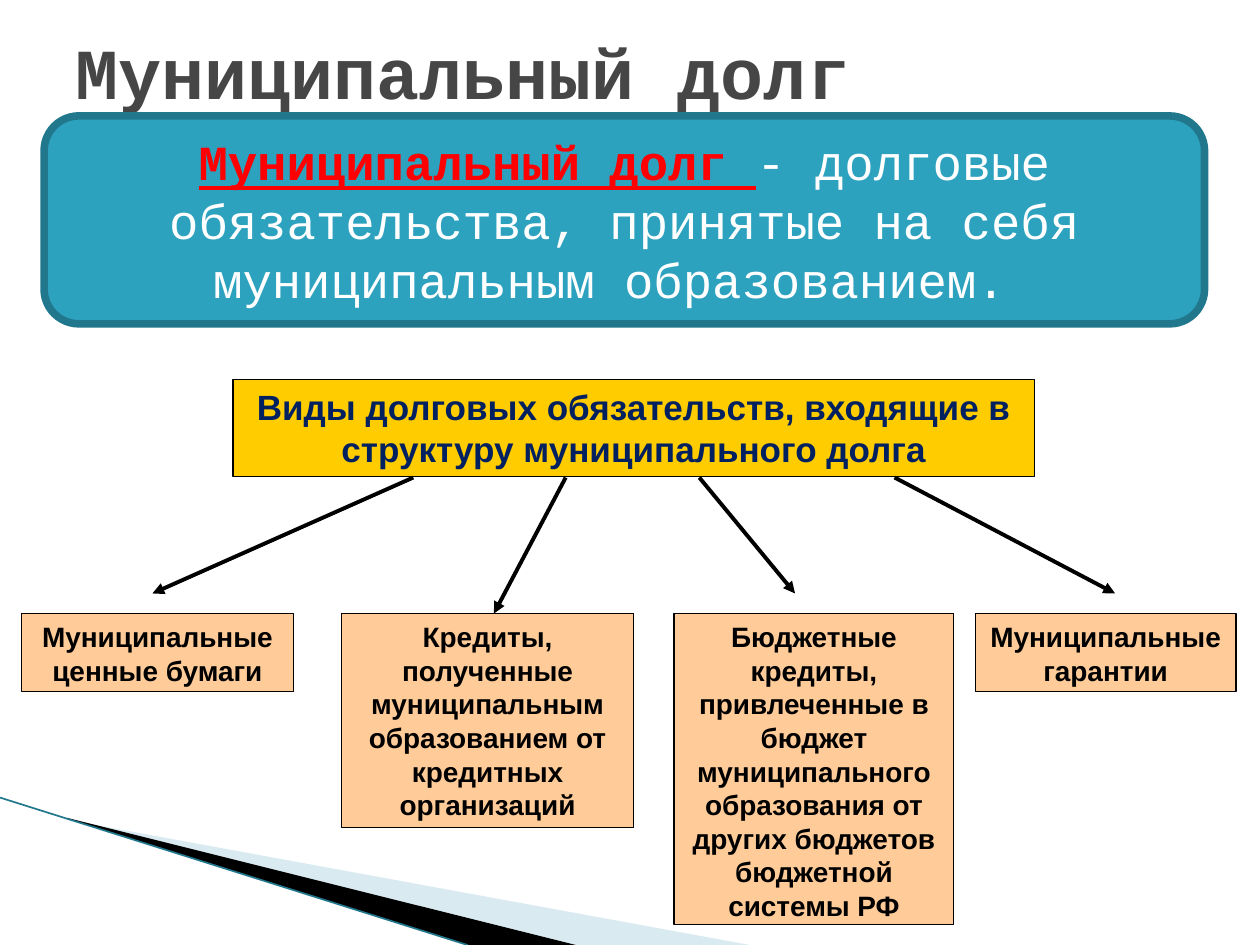
from lxml import etree
from pptx import Presentation
from pptx.dml.color import RGBColor
from pptx.enum.shapes import MSO_CONNECTOR, MSO_SHAPE
from pptx.enum.text import MSO_ANCHOR, PP_ALIGN
from pptx.oxml.ns import qn
from pptx.util import Inches, Pt

RECTANGLE, ROUNDED = MSO_SHAPE.RECTANGLE, MSO_SHAPE.ROUNDED_RECTANGLE
STRAIGHT = MSO_CONNECTOR.STRAIGHT
TOP, MIDDLE = MSO_ANCHOR.TOP, MSO_ANCHOR.MIDDLE
LEFT, CENTER = PP_ALIGN.LEFT, PP_ALIGN.CENTER

TITLE = "Муниципальный долг"
DEFINITION = [
    ("Муниципальный долг ", "FF0000", {"bold": True, "underline": True}),
    ("- долговые обязательства, принятые на себя муниципальным образованием. ", "FFFFFF",
     {"bold": False, "underline": False}),
]
HEADING = "Виды долговых обязательств, входящие в структуру муниципального долга"

# text, left, width, height
DEBT_TYPES = [
    ("Муниципальные ценные бумаги", 0.17, 2.16, 0.62),
    ("Кредиты, полученные муниципальным образованием от кредитных организаций",
     2.71, 2.32, 1.7),
    ("Бюджетные кредиты, привлеченные в бюджет муниципального образования "
     "от других бюджетов бюджетной системы РФ", 5.35, 2.22, 2.47),
    ("Муниципальные гарантии", 7.74, 2.07, 0.62),
]
DEBT_TOP = 4.87

# start x, end x, end y
ARROW_TOP = 3.79
ARROWS = [(3.28, 1.21, 4.71), (4.49, 3.92, DEBT_TOP), (5.55, 6.31, 4.71), (7.1, 8.85, 4.71)]

# points, colour, opacity in percent
CORNER_WEDGES = [
    ([(0.55, 6.51), (5.95, 7.5), (4.56, 7.5), (0.55, 6.5)], "A0CBDC", 40),
    ([(0.53, 6.49), (4.57, 7.5), (3.72, 7.5), (0.54, 6.5)], "000000", 100),
]
CORNER_LINE = [(0, 6.33), (3.71, 7.5)]

TITLE_FONT = {"name": "Courier New", "size": Pt(41), "bold": True}
DEFINITION_FONT = {"name": "Courier New", "size": Pt(28)}
HEADING_FONT = {"name": "Arial", "size": Pt(20), "bold": True}
DEBT_FONT = {"name": "Arial", "size": Pt(16), "bold": True}


def color(value):
    return RGBColor.from_string(value)


def fill_solid(shape, value):
    shape.fill.solid()
    shape.fill.fore_color.rgb = color(value)


def write_text(shape, runs, font_format, align=CENTER, anchor=TOP):
    """Fill a shape with one paragraph of (text, colour, extra format) runs."""
    frame = shape.text_frame
    frame.word_wrap = True
    frame.vertical_anchor = anchor
    paragraph = frame.paragraphs[0]
    paragraph.alignment = align
    for text, text_color, extra in runs:
        run = paragraph.add_run()
        run.text = text
        run.font.color.rgb = color(text_color)
        for name, value in {**font_format, **extra}.items():
            setattr(run.font, name, value)


def add_box(slide, preset, place, fill, line_color, line_width):
    shape = slide.shapes.add_shape(preset, *map(Inches, place))
    shape.shadow.inherit = False
    fill_solid(shape, fill)
    shape.line.color.rgb = color(line_color)
    shape.line.width = Pt(line_width)
    return shape


def add_line(slide, start, end, line_color, width, arrow=False):
    line = slide.shapes.add_connector(STRAIGHT, *map(Inches, (*start, *end)))
    line.line.color.rgb = color(line_color)
    line.line.width = Pt(width)
    properties = line._element.spPr
    if arrow:
        etree.SubElement(properties.find(qn("a:ln")), qn("a:tailEnd"), type="triangle")
    etree.SubElement(properties, qn("a:effectLst"))


def add_wedge(slide, points, fill, opacity):
    corners = [tuple(map(Inches, point)) for point in points]
    builder = slide.shapes.build_freeform(*corners[0])
    builder.add_line_segments(corners[1:], close=True)
    wedge = builder.convert_to_shape()
    wedge.shadow.inherit = False
    fill_solid(wedge, fill)
    wedge.line.fill.background()
    if opacity < 100:
        fill_color = wedge._element.spPr.find(qn("a:solidFill"))[0]
        etree.SubElement(fill_color, qn("a:alpha"), val=str(opacity * 1000))


def main():
    presentation = Presentation()
    presentation.slide_width, presentation.slide_height = Inches(10), Inches(7.5)
    slide = presentation.slides.add_slide(presentation.slide_layouts[6])

    for wedge in CORNER_WEDGES:
        add_wedge(slide, *wedge)
    add_line(slide, *CORNER_LINE, "21788D", 0.95)

    title = slide.shapes.add_textbox(*map(Inches, (0.5, 0.13, 9, 0.87)))
    write_text(title, [(TITLE, "464646", {})], TITLE_FONT, LEFT, MIDDLE)

    heading = add_box(slide, RECTANGLE, (1.85, 3.01, 6.36, 0.77), "FFCC00", "000000", 0.75)
    write_text(heading, [(HEADING, "002060", {})], HEADING_FONT)

    for text, left, width, height in DEBT_TYPES:
        box = add_box(slide, RECTANGLE, (left, DEBT_TOP, width, height),
                      "FFCC99", "000000", 0.75)
        write_text(box, [(text, "000000", {})], DEBT_FONT)

    for start_x, end_x, end_y in ARROWS:
        add_line(slide, (start_x, ARROW_TOP), (end_x, end_y), "000000", 2.25, arrow=True)

    definition = add_box(slide, ROUNDED, (0.35, 0.92, 9.21, 1.65), "2DA2BF", "21788D", 4.33)
    write_text(definition, DEFINITION, DEFINITION_FONT, anchor=MIDDLE)

    presentation.save("out.pptx")


if __name__ == "__main__":
    main()
